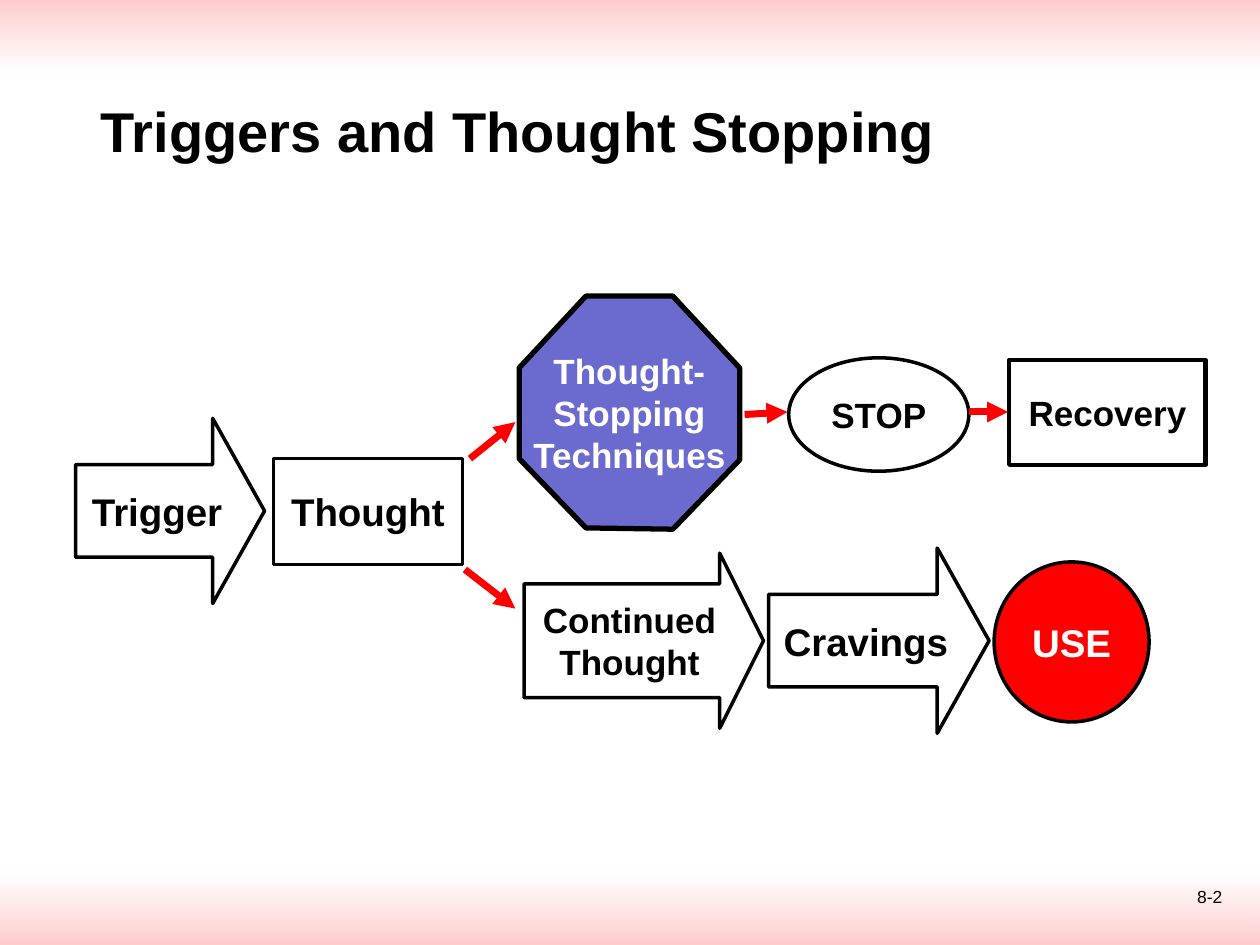
import pptx
import pptx.util
import pptx.dml.color
import pptx.enum.shapes
import pptx.enum.text
import pptx.oxml
import pptx.oxml.ns
from pptx.util import Inches

C = {"black": "000000", "white": "FFFFFF", "red": "FF0000", "pink": "FFCCCC", "violet": "6B6BCF"}
C = {name: pptx.dml.color.RGBColor.from_string(value) for name, value in C.items()}
MSO = pptx.enum.shapes.MSO_SHAPE
ALIGN = pptx.enum.text.PP_ALIGN
MIDDLE = pptx.enum.text.MSO_ANCHOR.MIDDLE


def add_text(tf, text, size, color="black", align=ALIGN.CENTER, bold=True):
    tf.word_wrap = True
    tf.vertical_anchor = MIDDLE
    p = tf.paragraphs[0]
    p.alignment = align
    r = p.add_run()
    r.text = text
    r.font.name = "Arial"
    r.font.size = pptx.util.Pt(size)
    r.font.bold = bold
    r.font.color.rgb = C[color]


def style_node(sp, text, size, fill="white", color="black", width=2):
    sp.shadow.inherit = False
    sp.fill.solid()
    sp.fill.fore_color.rgb = C[fill]
    sp.line.color.rgb = C["black"]
    sp.line.width = pptx.util.Pt(width)
    sp.text_frame.margin_left = sp.text_frame.margin_right = 0
    add_text(sp.text_frame, text, size, color)


prs = pptx.Presentation()
prs.slide_width, prs.slide_height = Inches(10), Inches(7.5)
s = prs.slides.add_slide(prs.slide_layouts[5])

# Gradient bands at the bottom and top
for top, colors in [(6.92, ("white", "pink")), (0, ("pink", "white"))]:
    sp = s.shapes.add_shape(MSO.RECTANGLE, 0, Inches(top), prs.slide_width, Inches(0.58))
    sp.shadow.inherit = False
    sp.line.fill.background()
    sp.fill.gradient()
    sp.fill.gradient_angle = 270
    for stop, color in zip(sp.fill.gradient_stops, colors):
        stop.color.rgb = C[color]

# Title
title = s.shapes.title
title.left, title.top, title.width, title.height = (Inches(v) for v in (0.7, 0.56, 8.42, 0.95))
add_text(title.text_frame, "Triggers and Thought Stopping", 32, align=ALIGN.LEFT)

# Page number
tb = s.shapes.add_textbox(Inches(7.47), Inches(6.98), Inches(2.33), Inches(0.52))
add_text(tb.text_frame, "8-2", 10, align=ALIGN.RIGHT, bold=False)
tb.text_frame.vertical_anchor = pptx.enum.text.MSO_ANCHOR.TOP

# Block arrows: text, size, box, adjustments
for text, size, box, adjustments in [
    ("Trigger", 22, (0.6, 3.32, 1.5, 1.47), (0.5, 0.28)),
    ("Continued Thought", 20, (4.16, 4.39, 1.9, 1.39), (0.65, 0.25)),
    ("Cravings", 22, (6.1, 4.35, 1.75, 1.47), (0.5, 0.28)),
]:
    sp = s.shapes.add_shape(MSO.RIGHT_ARROW, *(Inches(v) for v in box))
    for i, value in enumerate(adjustments):
        sp.adjustments[i] = value
    style_node(sp, text, size)

# Boxes and ellipses: shape, text, size, box, fill, text colour, line width
for kind, text, size, box, fill, color, width in [
    (MSO.RECTANGLE, "Thought", 22, (2.17, 3.64, 1.5, 0.84), "white", "black", 2),
    (MSO.OVAL, "USE", 22, (7.89, 4.46, 1.23, 1.27), "red", "white", 2),
    (MSO.OVAL, "STOP", 20, (6.26, 2.84, 1.43, 0.9), "white", "black", 2),
    (MSO.RECTANGLE, "Recovery", 20, (8.01, 2.86, 1.56, 0.83), "white", "black", 2.5),
]:
    sp = s.shapes.add_shape(kind, *(Inches(v) for v in box))
    style_node(sp, text, size, fill, color, width)

# Stop sign
corners = [(5.34, 2.35), (4.65, 2.35), (4.12, 2.92), (4.12, 3.64),
           (4.65, 4.19), (5.34, 4.2), (5.87, 3.65), (5.87, 2.92)]
points = [(Inches(x), Inches(y)) for x, y in corners]
builder = s.shapes.build_freeform(*points[0])
builder.add_line_segments(points[1:], close=True)
style_node(builder.convert_to_shape(), "Thought-Stopping Techniques", 20, "violet", "white", 3)

# Red arrows between the steps
for ends in [(3.73, 3.64, 4.09, 3.35), (3.69, 4.52, 4.09, 4.83),
             (5.91, 3.29, 6.25, 3.27), (7.69, 3.27, 8, 3.27)]:
    line = s.shapes.add_connector(pptx.enum.shapes.MSO_CONNECTOR.STRAIGHT,
                                  *(Inches(v) for v in ends))
    line.line.color.rgb = C["red"]
    line.line.width = pptx.util.Pt(4)
    head = pptx.oxml.parse_xml(
        '<a:tailEnd %s type="triangle"/>' % pptx.oxml.ns.nsdecls("a"))
    line.line._get_or_add_ln().append(head)
    line._element.spPr.append(
        pptx.oxml.parse_xml("<a:effectLst %s/>" % pptx.oxml.ns.nsdecls("a")))

prs.save("out.pptx")
